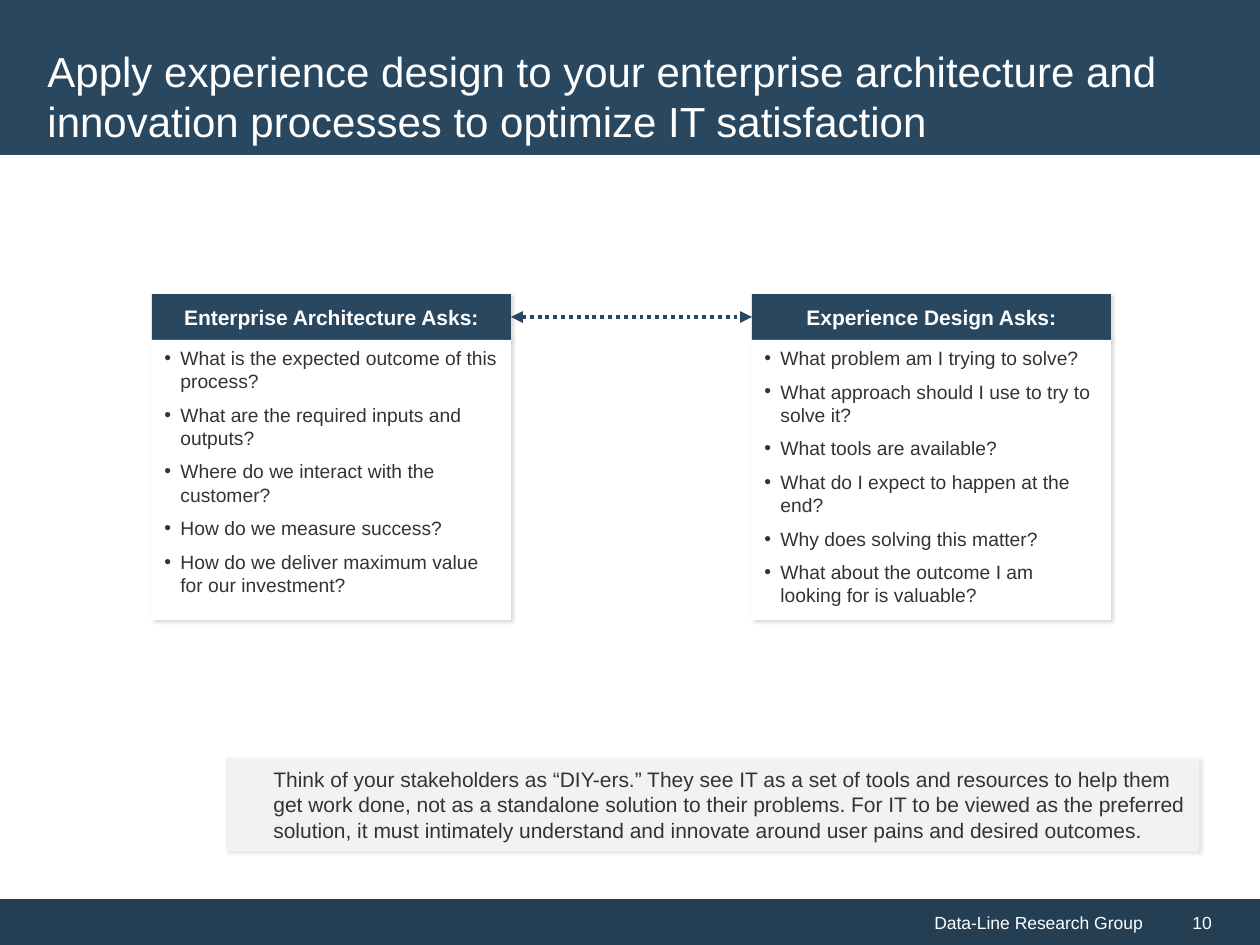
from lxml.etree import SubElement
from pptx import Presentation
from pptx.dml.color import RGBColor
from pptx.enum.dml import MSO_LINE
from pptx.enum.shapes import MSO_CONNECTOR, MSO_SHAPE
from pptx.enum.text import MSO_ANCHOR as ANCHOR, PP_ALIGN as ALIGN
from pptx.oxml.ns import qn
from pptx.util import Emu, Pt

PX = 914400 / 126
COLORS = {"navy": "29475F", "footer": "243F54", "white": "FFFFFF",
          "text": "333333", "note": "F2F2F2", "shadow": "000000"}
HEADER_H = 46

ARCHITECTURE = [
    "What is the expected outcome of this process?",
    "What are the required inputs and outputs?",
    "Where do we interact with the customer?",
    "How do we measure success?",
    "How do we deliver maximum value for our investment?",
]
EXPERIENCE = [
    "What problem am I trying to solve?",
    "What approach should I use to try to solve it?",
    "What tools are available?",
    "What do I expect to happen at the end?",
    "Why does solving this matter?",
    "What about the outcome I am looking for is valuable?",
]


def px(n):
    return Emu(round(n * PX))


def rgb(name):
    return RGBColor.from_string(COLORS[name])


def add_shadow(sp, alpha):
    """Soft shadow cast to the lower right; alpha is in percent."""
    effects = sp._element.spPr.find(qn("a:effectLst"))
    outer = SubElement(effects, qn("a:outerShdw"), blurRad=str(Pt(2)), dist=str(Pt(2)),
                       dir="2700000", algn="tl", rotWithShape="0")
    color = SubElement(outer, qn("a:srgbClr"), val=COLORS["shadow"])
    SubElement(color, qn("a:alpha"), val=str(alpha * 1000))


def add_rect(s, box, fill, shadow=0):
    sp = s.shapes.add_shape(MSO_SHAPE.RECTANGLE, *map(px, box))
    sp.fill.solid()
    sp.fill.fore_color.rgb = rgb(fill)
    sp.line.fill.background()
    sp.shadow.inherit = False
    if shadow:
        add_shadow(sp, shadow)
    return sp


def write(sp, lines, size, color, align=ALIGN.LEFT, anchor=ANCHOR.MIDDLE,
          bold=False, indent=0, bullet=False):
    tf = sp.text_frame
    tf.word_wrap = True
    tf.vertical_anchor = anchor
    tf.text = "\n".join(lines)
    for p in tf.paragraphs:
        p.alignment = align
        font = p.runs[0].font
        font.name, font.size, font.bold = "Arial", Pt(size), bold
        font.color.rgb = rgb(color)
        pPr = p._p.get_or_add_pPr()
        pPr.set("marL", str(px(indent)))
        pPr.set("indent", str(-px(indent) if bullet else 0))
        if bullet:
            p.space_before = Pt(6)
            SubElement(pPr, qn("a:buFont"), typeface="Arial")
            SubElement(pPr, qn("a:buChar"), char="•")


def add_title(s, box, text):
    x, y, w, h = box
    add_rect(s, box, "navy")
    title = s.shapes.add_textbox(px(x + 35), px(y + 35), px(w - 72), px(h - 34))
    write(title, [text], 24, "white")


def add_footer(s, box, owner, number):
    x, y, w, h = box
    number_w = 105
    left = add_rect(s, (x, y, w - number_w, h), "footer")
    write(left, [owner], 10, "white", align=ALIGN.RIGHT, indent=36)
    right = add_rect(s, (x + w - number_w, y, number_w, h), "footer")
    write(right, [number], 10, "white", indent=25)


def add_question_panel(s, box, heading, questions):
    x, y, w, h = box
    header = add_rect(s, (x, y, w, HEADER_H), "navy", shadow=15)
    write(header, [heading], 12, "white", align=ALIGN.CENTER, bold=True)
    body = add_rect(s, (x, y + HEADER_H, w, h - HEADER_H), "white", shadow=15)
    write(body, questions, 11, "text", anchor=ANCHOR.TOP, indent=16, bullet=True)


def add_double_arrow(s, x1, x2, y):
    line = s.shapes.add_connector(MSO_CONNECTOR.STRAIGHT, px(x1), px(y), px(x2), px(y))
    line.line.color.rgb = rgb("navy")
    line.line.width = Pt(2.25)
    line.line.dash_style = MSO_LINE.ROUND_DOT
    ln = line.line._get_or_add_ln()
    ln.find(qn("a:prstDash")).set("val", "sysDot")
    for end in ("a:headEnd", "a:tailEnd"):
        SubElement(ln, qn(end), type="triangle")
    SubElement(line._element.spPr, qn("a:effectLst"))


def add_note(s, box, text):
    write(add_rect(s, box, "note", shadow=10), [text], 12, "text", indent=35)


def main():
    prs = Presentation()
    prs.slide_width, prs.slide_height = px(1260), px(945)
    s = prs.slides.add_slide(prs.slide_layouts[6])

    add_footer(s, (0, 899, 1260, 46), "Data-Line Research Group", "10")
    add_title(s, (0, 0, 1260, 155),
              "Apply experience design to your enterprise architecture and "
              "innovation processes to optimize IT satisfaction")

    left, right, top, w, h = 152, 752, 294, 359, 326
    add_question_panel(s, (left, top, w, h), "Enterprise Architecture Asks:", ARCHITECTURE)
    add_question_panel(s, (right, top, w, h), "Experience Design Asks:", EXPERIENCE)
    add_double_arrow(s, left + w, right, top + HEADER_H // 2)

    add_note(s, (226, 758, 973, 93),
             "Think of your stakeholders as “DIY-ers.” They see IT as a set of tools and "
             "resources to help them get work done, not as a standalone solution to their "
             "problems. For IT to be viewed as the preferred solution, it must intimately "
             "understand and innovate around user pains and desired outcomes.")

    prs.save("out.pptx")


if __name__ == "__main__":
    main()
